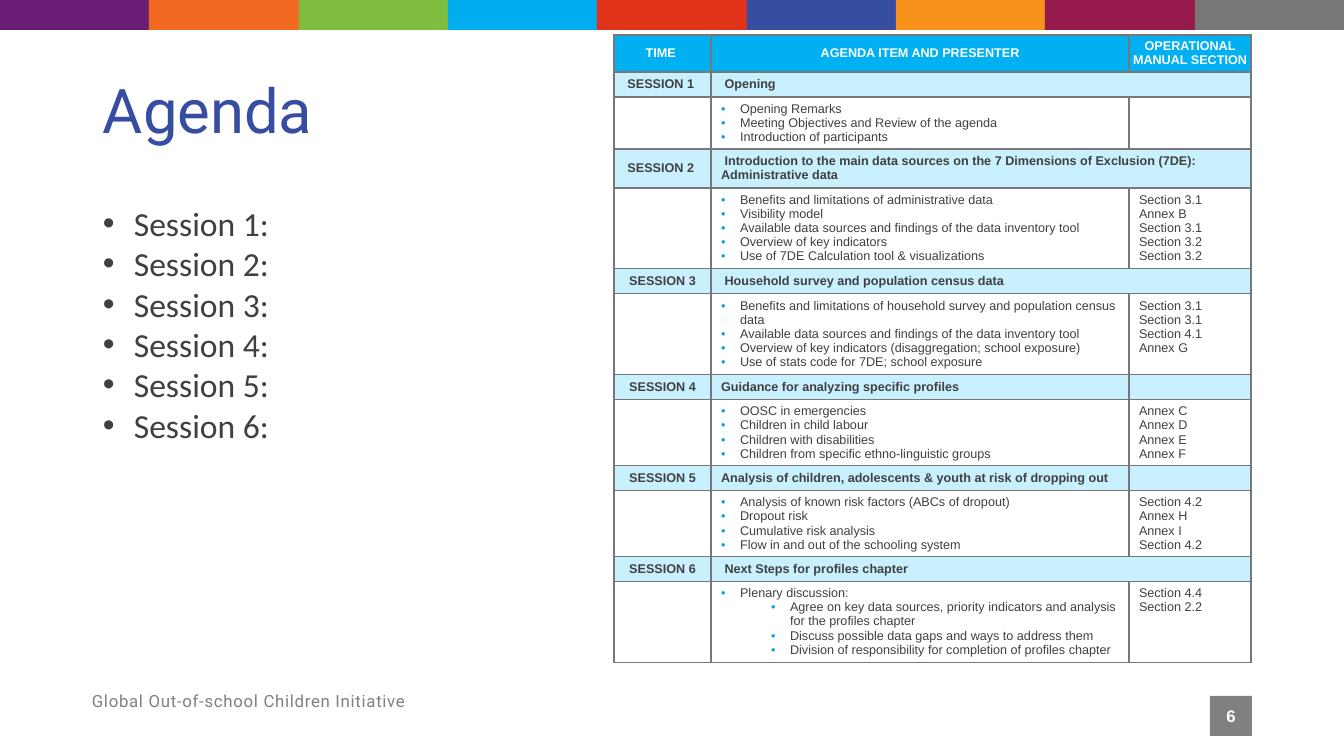
from dataclasses import dataclass

from lxml.etree import SubElement
from pptx import Presentation
from pptx.dml.color import RGBColor
from pptx.enum.shapes import MSO_SHAPE
from pptx.enum.text import MSO_ANCHOR, PP_ALIGN
from pptx.oxml.ns import qn
from pptx.util import Emu, Pt


@dataclass(frozen=True)
class Theme:
    bars: tuple = ("691D74", "F16920", "7FBD41", "00AEEF", "E13319",
                   "364DA1", "F7931D", "961A4B", "77777A")
    title: str = "364DA1"
    text: str = "404040"
    muted: str = "808080"
    white: str = "FFFFFF"
    header_fill: str = "00B0F0"
    session_fill: str = "C9F0FF"
    border: str = "77777A"
    table_bullet: str = "00A3DB"
    title_size: int = 44
    list_size: int = 24
    small_size: int = 12
    table_size: int = 9


@dataclass(frozen=True)
class Session:
    label: str
    heading: str
    items: tuple
    references: tuple = ()
    sub_items: tuple = ()
    merged: bool = True


THEME = Theme()
SLIDE_WIDTH, SLIDE_HEIGHT = 1344, 756
COLUMN_WIDTHS = (97, 418, 122)
ROW_HEIGHTS = (37, 25, 52, 39, 80, 25, 80, 25, 66, 25, 66, 25, 80)
HEADERS = ("TIME ", "AGENDA ITEM AND PRESENTER", "OPERATIONAL MANUAL SECTION")

SESSIONS = (
    Session("SESSION 1 ", " Opening ",
            ("Opening Remarks", "Meeting Objectives and Review of the agenda",
             "Introduction of participants")),
    Session("SESSION 2 ",
            " Introduction to the main data sources on the 7 Dimensions of "
            "Exclusion (7DE): Administrative data",
            ("Benefits and limitations of administrative data",
             "Visibility model",
             "Available data sources and findings of the data inventory tool",
             "Overview of key indicators",
             "Use of 7DE Calculation tool & visualizations"),
            ("Section 3.1", "Annex B", "Section 3.1", "Section 3.2", "Section 3.2")),
    Session("SESSION 3", " Household survey and population census data",
            ("Benefits and limitations of household survey and population census data",
             "Available data sources and findings of the data inventory tool",
             "Overview of key indicators (disaggregation; school exposure)",
             "Use of stats code for 7DE; school exposure"),
            ("Section 3.1 ", "Section 3.1", "Section 4.1", "Annex G")),
    Session("SESSION 4", "Guidance for analyzing specific profiles",
            ("OOSC in emergencies", "Children in child labour",
             "Children with disabilities",
             "Children from specific ethno-linguistic groups"),
            ("Annex C", "Annex D", "Annex E", "Annex F"), merged=False),
    Session("SESSION 5",
            "Analysis of children, adolescents & youth at risk of dropping out",
            ("Analysis of known risk factors (ABCs of dropout)", "Dropout risk",
             "Cumulative risk analysis", "Flow in and out of the schooling system"),
            ("Section 4.2", "Annex H", "Annex I", "Section 4.2"), merged=False),
    Session("SESSION 6", " Next Steps for profiles chapter",
            ("Plenary discussion:",), ("Section 4.4", "Section 2.2"),
            ("Agree on key data sources, priority indicators and analysis "
             "for the profiles chapter",
             "Discuss possible data gaps and ways to address them",
             "Division of responsibility for completion of profiles chapter")),
)


def px(length):
    return Emu(round(length * 914400 / 100.8))


def rgb(color):
    return RGBColor.from_string(color)


def write_lines(text_frame, lines, size, color, font="Arial", bold=False,
                align=PP_ALIGN.LEFT):
    text_frame.text = "\n".join(lines)
    for paragraph in text_frame.paragraphs:
        paragraph.alignment = align
        for run in paragraph.runs:
            run.font.name = font
            run.font.size = Pt(size)
            run.font.bold = bold
            run.font.color.rgb = rgb(color)


def add_bullet(paragraph, left, hanging, color):
    properties = paragraph._p.get_or_add_pPr()
    properties.set("marL", str(px(left)))
    properties.set("indent", str(-px(hanging)))
    bullet_color = SubElement(properties, qn("a:buClr"))
    SubElement(bullet_color, qn("a:srgbClr"), val=color)
    SubElement(properties, qn("a:buFont"), typeface="Arial")
    SubElement(properties, qn("a:buChar"), char="•")


def add_text(slide, box, lines, size, color, font, anchor=MSO_ANCHOR.MIDDLE):
    shape = slide.shapes.add_textbox(*map(px, box))
    text_frame = shape.text_frame
    text_frame.word_wrap = True
    text_frame.vertical_anchor = anchor
    write_lines(text_frame, lines, size, color, font)
    return text_frame


def add_rectangle(slide, box, color):
    shape = slide.shapes.add_shape(MSO_SHAPE.RECTANGLE, *map(px, box))
    shape.shadow.inherit = False
    shape.fill.solid()
    shape.fill.fore_color.rgb = rgb(color)
    shape.line.fill.background()
    return shape


def style_cell(cell, fill):
    properties = cell._tc.get_or_add_tcPr()
    for side in ("lnL", "lnR", "lnT", "lnB"):
        line = SubElement(properties, qn(f"a:{side}"), w=str(Pt(1)))
        line_fill = SubElement(line, qn("a:solidFill"))
        SubElement(line_fill, qn("a:srgbClr"), val=THEME.border)
    cell.fill.solid()
    cell.fill.fore_color.rgb = rgb(fill)


def fill_cell(cell, lines, fill, color=THEME.text, bold=False,
              align=PP_ALIGN.LEFT, anchor=MSO_ANCHOR.TOP, margins=(5, 0)):
    style_cell(cell, fill)
    cell.vertical_anchor = anchor
    cell.margin_top, cell.margin_bottom = map(px, margins)
    write_lines(cell.text_frame, lines, THEME.table_size, color, bold=bold, align=align)
    # Empty cells need the small type size too, so that rows stay low
    if not cell.text:
        SubElement(cell.text_frame.paragraphs[0]._p, qn("a:endParaRPr"),
                   sz=str(THEME.table_size * 100))


def add_header_row(table):
    for column, header in enumerate(HEADERS):
        cell = table.cell(0, column)
        cell.margin_left = cell.margin_right = 0
        fill_cell(cell, [header], THEME.header_fill, THEME.white, True,
                  PP_ALIGN.CENTER, MSO_ANCHOR.MIDDLE, (0, 0))


def add_session_rows(table, row, session):
    label, heading, last = (table.cell(row, column) for column in range(3))
    fill_cell(label, [session.label], THEME.session_fill, bold=True,
              align=PP_ALIGN.CENTER, anchor=MSO_ANCHOR.MIDDLE, margins=(3, 3))
    fill_cell(heading, [session.heading], THEME.session_fill, bold=True,
              anchor=MSO_ANCHOR.MIDDLE, margins=(3, 3))
    fill_cell(last, [], THEME.session_fill)
    if session.merged:
        heading.merge(last)

    time, agenda, reference = (table.cell(row + 1, column) for column in range(3))
    fill_cell(time, [], THEME.white)
    fill_cell(agenda, session.items + session.sub_items, THEME.white)
    fill_cell(reference, session.references, THEME.white)
    for index, paragraph in enumerate(agenda.text_frame.paragraphs):
        paragraph.level = int(index >= len(session.items))
        add_bullet(paragraph, 69 if paragraph.level else 19, 19, THEME.table_bullet)


def add_agenda_table(slide):
    frame = slide.shapes.add_table(
        len(ROW_HEIGHTS), len(COLUMN_WIDTHS),
        *map(px, (614, 35, sum(COLUMN_WIDTHS), sum(ROW_HEIGHTS))))
    table = frame.table
    table.first_row = table.horz_banding = False
    for column, width in zip(table.columns, COLUMN_WIDTHS):
        column.width = px(width)
    for row, height in zip(table.rows, ROW_HEIGHTS):
        row.height = px(height)
    add_header_row(table)
    for index, session in enumerate(SESSIONS):
        add_session_rows(table, 1 + 2 * index, session)


def main():
    presentation = Presentation()
    presentation.slide_width, presentation.slide_height = px(SLIDE_WIDTH), px(SLIDE_HEIGHT)
    slide = presentation.slides.add_slide(presentation.slide_layouts[6])

    # Colour band
    edges = [round(SLIDE_WIDTH * i / len(THEME.bars)) for i in range(len(THEME.bars) + 1)]
    for left, right, color in zip(edges, edges[1:], THEME.bars):
        add_rectangle(slide, (left, 0, right - left, 30), color)

    # Title and session list
    title = add_text(slide, (93, 41, 1159, 146), ["Agenda"], THEME.title_size,
                     THEME.title, "Roboto")
    title.paragraphs[0].line_spacing = 0.9
    sessions = add_text(slide, (93, 198, 529, 285),
                        [f"Session {number}:" for number in range(1, len(SESSIONS) + 1)],
                        THEME.list_size, THEME.text, "Calibri", MSO_ANCHOR.TOP)
    for paragraph in sessions.paragraphs:
        add_bullet(paragraph, 31, 31, THEME.text)

    add_agenda_table(slide)

    # Footer and page number
    footer = add_text(slide, (82, 681, 806, 40), ["Global Out-of-school Children Initiative"],
                      THEME.small_size, THEME.muted, "Roboto")
    footer.paragraphs[0].runs[0].font._element.set("spc", "50")
    page = add_rectangle(slide, (1210, 696, 42, 40), THEME.muted)
    page.text_frame.vertical_anchor = MSO_ANCHOR.MIDDLE
    write_lines(page.text_frame, ["6"], THEME.small_size, THEME.white, bold=True,
                align=PP_ALIGN.CENTER)

    presentation.save("out.pptx")


if __name__ == "__main__":
    main()
